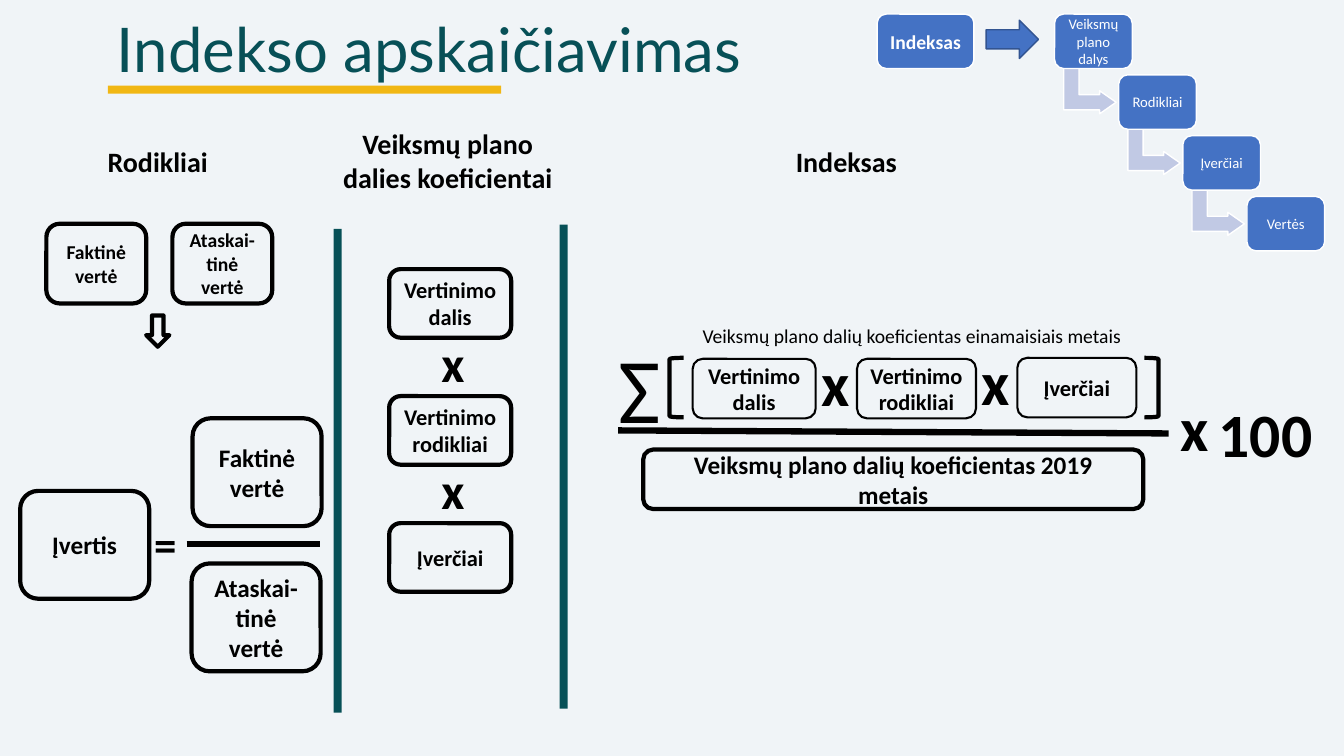
from dataclasses import dataclass

from lxml import etree
from pptx import Presentation
from pptx.dml.color import RGBColor
from pptx.enum.shapes import MSO_CONNECTOR, MSO_SHAPE
from pptx.enum.text import MSO_ANCHOR, MSO_AUTO_SIZE, PP_ALIGN
from pptx.oxml.ns import qn
from pptx.util import Inches, Pt


@dataclass(frozen=True)
class Theme:
    background: str = "F0F4F7"
    teal: str = "075057"
    yellow: str = "F1B714"
    blue: str = "4472C4"
    blue_edge: str = "325491"
    pale_blue: str = "C1C9E4"
    black: str = "000000"
    white: str = "FFFFFF"
    title_font: str = "Lato"
    body_font: str = "Calibri"
    title: float = 44
    heading: float = 20
    large: float = 18
    medium: float = 16
    small: float = 14
    step: float = 10.5
    sigma: float = 66
    factor: float = 44
    times: float = 36
    equals: float = 32
    thick: float = 3
    thin: float = 1.5
    hairline: float = 1
    fraction: float = 4.5


THEME = Theme()

# Every place is left, top, width, height in inches.
TITLE = ("Indekso apskaičiavimas", (1.06, 0.11, 10.48, 0.83))

HEADINGS = [
    ("Rodikliai", (0.73, 1.38, 1.67, 0.44)),
    ("Veiksmų plano\ndalies koeficientai", (3.25, 1.21, 2.38, 0.77)),
    ("Indeksas", (7.56, 1.38, 1.67, 0.44)),
]

# Text, place, type size, outline width
FORMULA_BOXES = [
    ("Faktinė vertė", (0.46, 2.22, 0.99, 0.79), THEME.small, THEME.thick),
    ("Ataskai-tinė vertė", (1.71, 2.22, 0.99, 0.79), THEME.small, THEME.thick),
    ("Įvertis", (0.2, 4.87, 1.28, 1.07), THEME.large, THEME.thick),
    ("Faktinė vertė", (1.91, 4.15, 1.28, 1.07), THEME.large, THEME.thick),
    ("Ataskai-tinė vertė", (1.9, 5.59, 1.28, 1.07), THEME.large, THEME.thick),
    ("Vertinimo dalis", (6.87, 3.56, 1.22, 0.59), THEME.medium, THEME.thin),
    ("Vertinimo rodikliai", (8.5, 3.56, 1.18, 0.59), THEME.medium, THEME.thin),
    ("Įverčiai", (10.09, 3.55, 1.18, 0.59), THEME.medium, THEME.thin),
    ("Veiksmų plano dalių koeficientas 2019 metais", (6.38, 4.46, 4.96, 0.59),
     THEME.large, THEME.thick),
]

COEFFICIENT_FACTORS = ["Vertinimo dalis", "Vertinimo rodikliai", "Įverčiai"]
FACTOR_PLACE = (3.86, 2.67, 1.21, 0.68)
FACTOR_PITCH = 1.26
TIMES_PLACE = (4.28, 3.25, 0.36, 0.71)

# Text, place, type size, bold
SYMBOLS = [
    ("=", (1.43, 5.08, 0.32, 0.64), THEME.equals, True),
    ("x", (8.05, 3.37, 0.45, 0.84), THEME.factor, True),
    ("x", (9.64, 3.36, 0.45, 0.84), THEME.factor, True),
    ("x", (11.61, 3.82, 0.45, 0.84), THEME.factor, True),
    ("100", (11.99, 3.88, 1.34, 0.84), THEME.factor, True),
    ("Σ", (6.04, 3.24, 0.57, 1.21), THEME.sigma, False),
]
NUMERATOR_NOTE = ("Veiksmų plano dalių koeficientas einamaisiais metais",
                  (6.87, 3.16, 4.4, 0.34))

FRACTION_LINES = [((1.85, 5.4), (3.17, 5.4)), ((6.13, 4.27), (11.59, 4.3))]
DIVIDERS = [(3.31, 2.27, 0.08, 4.8), (5.55, 2.23, 0.08, 4.8)]
BRACKETS = [((6.64, 3.55, 0.14, 0.59), 0), ((11.35, 3.55, 0.14, 0.59), 180)]

STEPS = ["Veiksmų plano dalys", "Rodikliai", "Įverčiai", "Vertės"]
STEP_PLACE = (10.46, 0.14, 0.77, 0.54)
STEP_ARROW_PLACE = (10.58, 0.64, 0.46, 0.52)
STEP_SHIFT = (0.636, 0.603)
INDEX_START = ("Indeksas", (8.7, 0.14, 0.96, 0.54))


def color(value):
    return RGBColor.from_string(value)


def shifted(place, across, down):
    left, top, width, height = place
    return left + across, top + down, width, height


def write(frame, text, *, size, tint=THEME.black, bold=False, font=THEME.body_font,
          align=PP_ALIGN.CENTER, anchor=MSO_ANCHOR.MIDDLE, wrap=True, inset=None,
          spacing=None):
    """Fill a text frame, one paragraph for each line of the text."""
    frame.text = text
    frame.word_wrap = wrap
    frame.auto_size = MSO_AUTO_SIZE.NONE
    frame.vertical_anchor = anchor
    if inset is not None:
        frame.margin_left = frame.margin_right = Inches(inset)
        frame.margin_top = frame.margin_bottom = Inches(inset)
    for paragraph in frame.paragraphs:
        paragraph.alignment = align
        if spacing:
            paragraph.line_spacing = spacing
        paragraph.font.size = Pt(size)
        paragraph.font.bold = bold
        paragraph.font.name = font
        paragraph.font.color.rgb = color(tint)


def add_label(slide, text, place, **text_format):
    box = slide.shapes.add_textbox(*map(Inches, place))
    write(box.text_frame, text, anchor=MSO_ANCHOR.TOP, **text_format)


def add_figure(slide, kind, place, *, fill=None, edge=None, weight=THEME.thick,
               rotation=0, adjustments=()):
    figure = slide.shapes.add_shape(kind, *map(Inches, place))
    figure.shadow.inherit = False
    figure.rotation = rotation
    for index, value in enumerate(adjustments):
        figure.adjustments[index] = value
    if fill:
        figure.fill.solid()
        figure.fill.fore_color.rgb = color(fill)
    else:
        figure.fill.background()
    if edge:
        figure.line.color.rgb = color(edge)
        figure.line.width = Pt(weight)
    else:
        figure.line.fill.background()
    return figure


def add_formula_box(slide, text, place, size, weight):
    box = add_figure(slide, MSO_SHAPE.ROUNDED_RECTANGLE, place, edge=THEME.black,
                     weight=weight)
    write(box.text_frame, text, size=size, bold=True)


def add_blue_box(slide, text, place, **text_format):
    box = add_figure(slide, MSO_SHAPE.ROUNDED_RECTANGLE, place, fill=THEME.blue,
                     edge=THEME.white, weight=THEME.hairline)
    write(box.text_frame, text, tint=THEME.white, **text_format)


def add_fraction_line(slide, start, end):
    line = slide.shapes.add_connector(MSO_CONNECTOR.STRAIGHT, *map(Inches, start + end))
    line.line.color.rgb = color(THEME.black)
    line.line.width = Pt(THEME.fraction)
    etree.SubElement(line._element.spPr, qn("a:effectLst"))


def add_title(slide):
    text, place = TITLE
    title = slide.shapes.title
    title.left, title.top, title.width, title.height = map(Inches, place)
    write(title.text_frame, text, size=THEME.title, tint=THEME.teal,
          font=THEME.title_font, align=PP_ALIGN.LEFT, spacing=0.9)
    add_figure(slide, MSO_SHAPE.RECTANGLE, (1.07, 0.85, 3.9, 0.08), fill=THEME.yellow)


def add_formulas(slide):
    for text, place in HEADINGS:
        add_label(slide, text, place, size=THEME.heading, bold=True)
    for place in DIVIDERS:
        add_figure(slide, MSO_SHAPE.RECTANGLE, place, fill=THEME.teal)
    for start, end in FRACTION_LINES:
        add_fraction_line(slide, start, end)
    for box in FORMULA_BOXES:
        add_formula_box(slide, *box)
    for row, text in enumerate(COEFFICIENT_FACTORS):
        down = row * FACTOR_PITCH
        add_formula_box(slide, text, shifted(FACTOR_PLACE, 0, down),
                        THEME.medium, THEME.thick)
        if row < len(COEFFICIENT_FACTORS) - 1:
            add_label(slide, "x", shifted(TIMES_PLACE, 0, down),
                      size=THEME.times, bold=True)
    for text, place, size, bold in SYMBOLS:
        add_label(slide, text, place, size=size, bold=bold, align=PP_ALIGN.LEFT)
    note, note_place = NUMERATOR_NOTE
    add_label(slide, note, note_place, size=THEME.small, align=PP_ALIGN.LEFT, wrap=False)
    for place, rotation in BRACKETS:
        add_figure(slide, MSO_SHAPE.LEFT_BRACKET, place, edge=THEME.black,
                   rotation=rotation)
    add_figure(slide, MSO_SHAPE.DOWN_ARROW, (1.45, 3.13, 0.23, 0.31), edge=THEME.black)


def add_staircase(slide):
    across, down = STEP_SHIFT
    for level, text in enumerate(STEPS):
        shift = level * across, level * down
        if level < len(STEPS) - 1:
            add_figure(slide, MSO_SHAPE.BENT_UP_ARROW, shifted(STEP_ARROW_PLACE, *shift),
                       fill=THEME.pale_blue, edge=THEME.white, weight=THEME.hairline,
                       rotation=90, adjustments=(0.328, 0.25, 0.358))
        add_blue_box(slide, text, shifted(STEP_PLACE, *shift), size=THEME.step, inset=0.05)
    add_blue_box(slide, *INDEX_START, size=THEME.small, bold=True, inset=0.07)
    add_figure(slide, MSO_SHAPE.RIGHT_ARROW, (9.78, 0.2, 0.52, 0.38), fill=THEME.blue,
               edge=THEME.blue_edge, weight=THEME.hairline)


def main():
    deck = Presentation()
    deck.slide_width, deck.slide_height = Inches(13.33), Inches(7.5)
    slide = deck.slides.add_slide(deck.slide_layouts[5])
    slide.background.fill.solid()
    slide.background.fill.fore_color.rgb = color(THEME.background)
    add_title(slide)
    add_formulas(slide)
    add_staircase(slide)
    deck.save("out.pptx")


if __name__ == "__main__":
    main()
